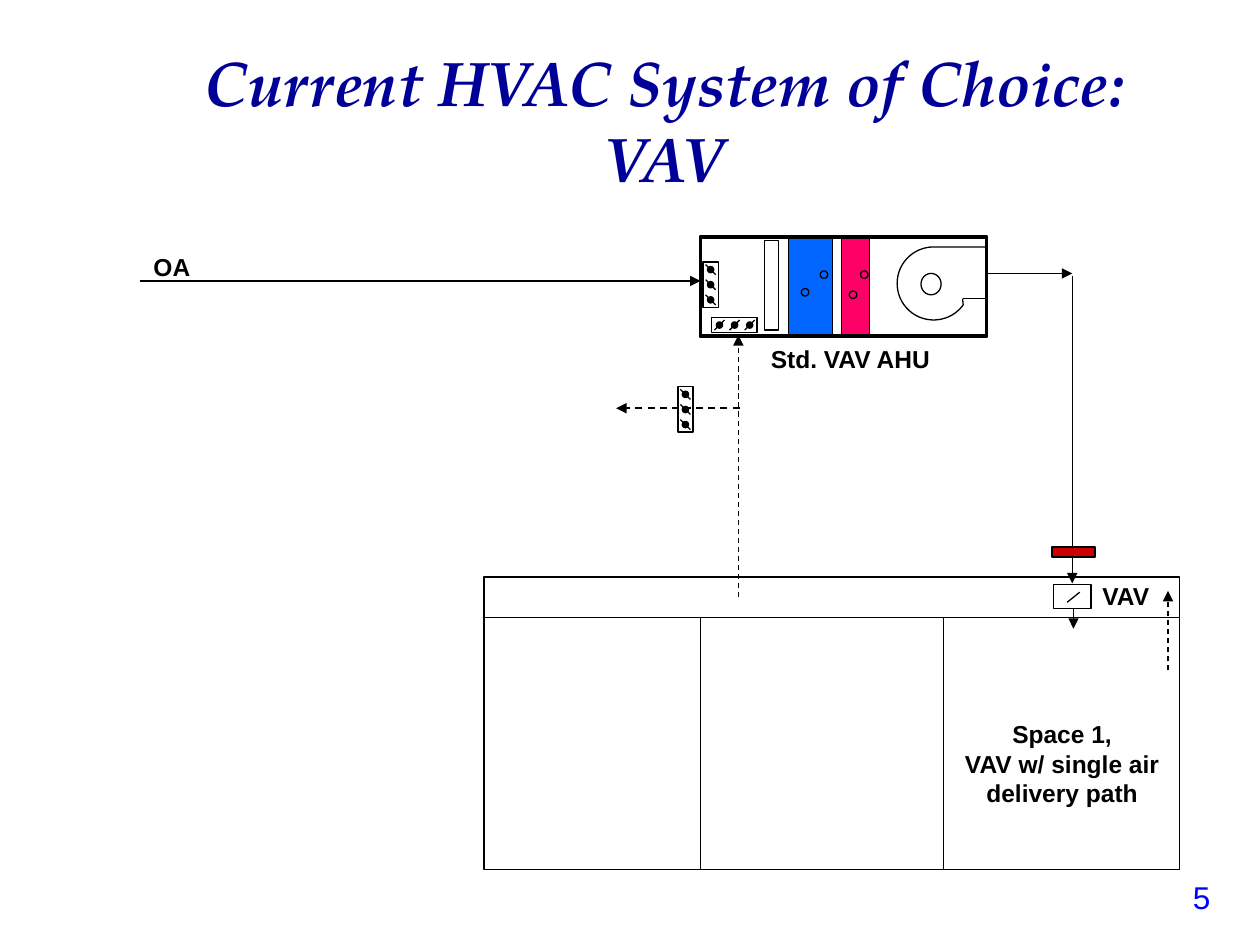
from math import cos, radians, sin

from lxml.etree import SubElement
from pptx import Presentation
from pptx.dml.color import RGBColor
from pptx.enum.dml import MSO_LINE
from pptx.enum.shapes import MSO_CONNECTOR, MSO_SHAPE as Preset
from pptx.enum.text import MSO_ANCHOR, MSO_AUTO_SIZE, PP_ALIGN as Align
from pptx.oxml.ns import qn
from pptx.util import Inches, Pt

COLORS = {
    "title": "000099",
    "number": "0000FF",
    "ink": "000000",
    "cooling": "0066FF",
    "heating": "FF0066",
    "reheat": "CC0000",
}


def color(name):
    return RGBColor.from_string(COLORS[name])


def style_shape(shape, fill=None, weight=0.75):
    shape.shadow.inherit = False
    if fill:
        shape.fill.solid()
        shape.fill.fore_color.rgb = color(fill)
    else:
        shape.fill.background()
    shape.line.color.rgb = color("ink")
    shape.line.width = Pt(weight)


def add_preset(shapes, preset, left, top, width, height, fill=None, weight=0.75):
    shape = shapes.add_shape(
        preset, Inches(left), Inches(top), Inches(width), Inches(height))
    style_shape(shape, fill, weight)


def add_line(shapes, start, end, arrow=False, dashed=False, weight=0.75):
    line = shapes.add_connector(
        MSO_CONNECTOR.STRAIGHT, *map(Inches, (*start, *end)))
    line.line.color.rgb = color("ink")
    line.line.width = Pt(weight)
    if dashed:
        line.line.dash_style = MSO_LINE.DASH
    if arrow:
        SubElement(line.line._get_or_add_ln(), qn("a:tailEnd"), type="triangle")
    SubElement(line._element.spPr, qn("a:effectLst"))


def add_outline(shapes, points):
    start, *rest = [(Inches(x), Inches(y)) for x, y in points]
    builder = shapes.build_freeform(*start)
    builder.add_line_segments(rest, close=False)
    style_shape(builder.convert_to_shape())


def add_label(shapes, lines, left, top, width, height, align=Align.LEFT,
              size=14, ink="ink", bold=True):
    box = shapes.add_textbox(
        Inches(left), Inches(top), Inches(width), Inches(height))
    frame = box.text_frame
    frame.word_wrap = True
    frame.text = "\n".join(lines)
    for para in frame.paragraphs:
        para.alignment = align
        para.font.name = "Arial"
        para.font.size = Pt(size)
        para.font.bold = bold
        para.font.color.rgb = color(ink)


def add_title(page, text):
    title = page.shapes.title
    title.left, title.top = Inches(1.1), Inches(0.3)
    title.width, title.height = Inches(8.35), Inches(1.29)
    frame = title.text_frame
    frame.text = text
    frame.word_wrap = True
    frame.auto_size = MSO_AUTO_SIZE.NONE
    frame.vertical_anchor = MSO_ANCHOR.MIDDLE
    para = frame.paragraphs[0]
    para.alignment = Align.CENTER
    font = para.font
    font.name, font.size = "TeX Gyre Pagella", Pt(36)
    font.bold = font.italic = True
    font.color.rgb = color("title")


def add_damper(shapes, left, top, vertical):
    """Frame with three pivoted blades in a row or a column."""
    parts = shapes.add_group_shape().shapes
    size = (0.12, 0.36) if vertical else (0.36, 0.12)
    add_preset(parts, Preset.RECTANGLE, left, top, *size)
    for blade in range(3):
        along = 0.06 + 0.12 * blade
        x, y = (left + 0.06, top + along) if vertical else (left + along, top + 0.06)
        tilt = 0.04 if vertical else -0.04
        add_preset(parts, Preset.FLOWCHART_CONNECTOR,
                   x - 0.025, y - 0.025, 0.05, 0.05, "ink")
        add_line(parts, (x - tilt, y - 0.04), (x + tilt, y + 0.04))


def add_fan(shapes):
    parts = shapes.add_group_shape().shapes
    add_preset(parts, Preset.OVAL, 7.31, 2.17, 0.16, 0.17)
    center_x, center_y, radius = 7.41, 2.25, 0.29
    scroll = [(center_x + radius * cos(radians(angle)),
               center_y + radius * sin(radians(angle)))
              for angle in range(270, 35, -6)]
    add_outline(parts, [(7.83, 1.96), *scroll, (7.64, 2.37)])
    add_outline(parts, [(7.82, 1.96), (7.82, 2.37), (7.64, 2.37)])


def add_air_handler(shapes):
    add_fan(shapes)
    add_damper(shapes, 5.65, 2.52, vertical=False)
    add_damper(shapes, 5.58, 2.08, vertical=True)
    # Filter and coils
    add_preset(shapes, Preset.RECTANGLE, 6.07, 1.91, 0.11, 0.71)
    add_preset(shapes, Preset.RECTANGLE, 6.26, 1.87, 0.35, 0.8, "cooling")
    add_preset(shapes, Preset.RECTANGLE, 6.68, 1.87, 0.22, 0.8, "heating")
    for left, top in ((6.36, 2.29), (6.51, 2.15), (6.74, 2.31), (6.83, 2.15)):
        add_preset(shapes, Preset.FLOWCHART_CONNECTOR, left, top, 0.06, 0.06)
    # Casing
    add_preset(shapes, Preset.RECTANGLE, 5.56, 1.88, 2.27, 0.79, weight=2.25)


def add_building(shapes):
    parts = shapes.add_group_shape().shapes
    add_preset(parts, Preset.RECTANGLE, 3.84, 4.58, 5.52, 2.32)
    add_line(parts, (3.84, 4.9), (9.36, 4.9))
    for wall in (5.56, 7.49):
        add_line(parts, (wall, 4.9), (wall, 6.9))


def add_ducts(shapes):
    # Outdoor air and supply
    add_line(shapes, (1.11, 2.23), (5.56, 2.23), arrow=True)
    add_line(shapes, (7.83, 2.17), (8.51, 2.17), arrow=True)
    add_line(shapes, (8.51, 2.19), (8.51, 4.63), arrow=True)
    # Return and exhaust
    add_line(shapes, (5.86, 4.74), (5.86, 2.66), arrow=True, dashed=True)
    add_line(shapes, (9.27, 5.32), (9.27, 4.69), arrow=True, dashed=True)
    add_line(shapes, (5.87, 3.24), (4.89, 3.24), arrow=True, dashed=True, weight=1)
    add_damper(shapes, 5.38, 3.07, vertical=True)


def add_terminal_box(shapes):
    parts = shapes.add_group_shape().shapes
    add_preset(parts, Preset.RECTANGLE, 8.36, 4.64, 0.3, 0.19)
    add_line(parts, (8.57, 4.7), (8.47, 4.78))
    add_line(parts, (8.52, 4.83), (8.52, 4.99), arrow=True)
    # Reheat coil
    add_preset(shapes, Preset.RECTANGLE, 8.35, 4.34, 0.34, 0.08, "reheat")


def main():
    deck = Presentation()
    deck.slide_width, deck.slide_height = Inches(10), Inches(7.5)
    page = deck.slides.add_slide(deck.slide_layouts[5])
    shapes = page.shapes

    add_title(page, "Current HVAC System of Choice: VAV")
    add_building(shapes)
    add_ducts(shapes)
    add_air_handler(shapes)
    add_terminal_box(shapes)

    # Labels and slide number
    add_label(shapes, ["OA"], 1.12, 1.95, 0.63, 0.33)
    add_label(shapes, ["Std. VAV AHU"], 6.02, 2.68, 1.56, 0.33)
    add_label(shapes, ["VAV"], 8.65, 4.56, 0.62, 0.33)
    add_label(shapes, ["Space 1,", "VAV w/ single air delivery path"],
              7.51, 5.66, 1.84, 0.8, Align.CENTER)
    add_label(shapes, ["5"], 9.37, 6.92, 0.63, 0.4,
              size=18, ink="number", bold=False)

    deck.save("out.pptx")


if __name__ == "__main__":
    main()
